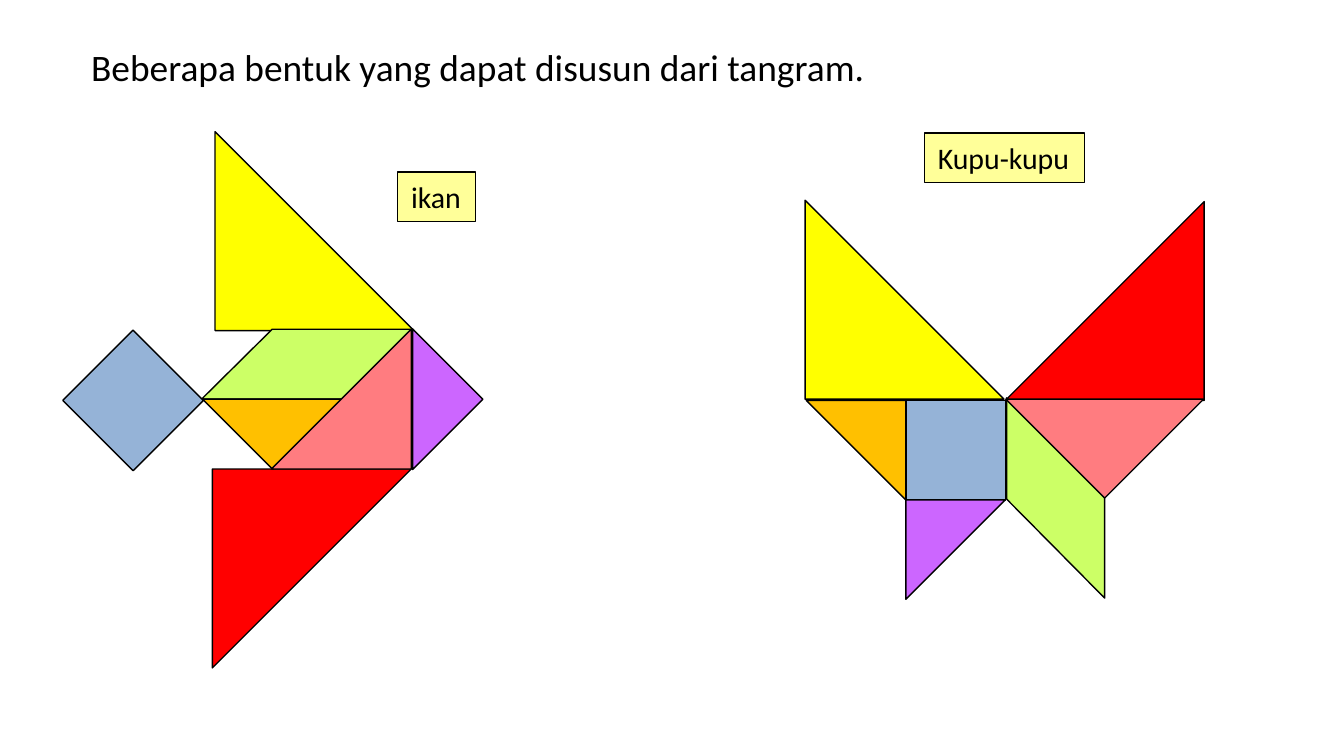
from pptx import Presentation
from pptx import util as u
from pptx.dml.color import RGBColor
from pptx.enum import shapes, text

BLACK = RGBColor(0x00, 0x00, 0x00)
YELLOW = RGBColor(0xFF, 0xFF, 0x00)
RED = RGBColor(0xFF, 0x00, 0x00)
GREEN = RGBColor(0xCC, 0xFF, 0x66)
ORANGE = RGBColor(0xFF, 0xC0, 0x00)
PINK = RGBColor(0xFF, 0x7C, 0x80)
BLUE = RGBColor(0x95, 0xB3, 0xD7)
PURPLE = RGBColor(0xCC, 0x66, 0xFF)
CREAM = RGBColor(0xFF, 0xFF, 0x99)

TRIANGLE = shapes.MSO_SHAPE.RIGHT_TRIANGLE
SQUARE = shapes.MSO_SHAPE.RECTANGLE
PARALLELOGRAM = shapes.MSO_SHAPE.PARALLELOGRAM
LARGE, MEDIUM, SMALL = (1.48, 1.48), (1.04, 1.04), (0.74, 0.74)
SLIDE_WIDTH = 10

TITLE = ("Beberapa bentuk yang dapat disusun dari tangram.", (0.58, 0.28, 6.01, 0.44))
LABELS = [
    ("ikan", (2.96, 1.28, 0.58, 0.37)),
    ("Kupu-kupu", (6.88, 0.99, 1.19, 0.37)),
]

FISH = [
    (TRIANGLE, YELLOW, (1.6, 0.98), LARGE, 0, ""),
    (TRIANGLE, RED, (1.58, 3.49), LARGE, 0, "V"),
    (PARALLELOGRAM, GREEN, (1.5, 2.45), (1.57, 0.52), 0, ""),
    (TRIANGLE, ORANGE, (1.66, 2.6), SMALL, 315, ""),
    (TRIANGLE, PINK, (2.02, 2.45), MEDIUM, 180, "V"),
    (SQUARE, BLUE, (0.62, 2.61), SMALL, 45, ""),
    (TRIANGLE, PURPLE, (2.7, 2.6), SMALL, 135, "V"),
]
BUTTERFLY = [
    (TRIANGLE, YELLOW, (5.99, 1.49), LARGE, 0, ""),
    (TRIANGLE, RED, (7.48, 1.5), LARGE, 0, "H"),
    (PARALLELOGRAM, GREEN, (7.11, 3.34), (1.49, 0.73), 270, "HV"),
    (TRIANGLE, ORANGE, (6, 2.98), SMALL, 0, "HV"),
    (TRIANGLE, PINK, (7.7, 2.45), MEDIUM, 315, ""),
    (SQUARE, BLUE, (6.74, 2.98), SMALL, 0, ""),
    (TRIANGLE, PURPLE, (6.74, 3.72), SMALL, 0, "V"),
]


def add_filled_shape(parent, kind, box, color):
    shape = parent.add_shape(kind, *map(u.Inches, box))
    shape.shadow.inherit = False
    shape.fill.solid()
    shape.fill.fore_color.rgb = color
    shape.line.color.rgb = BLACK
    shape.line.width = u.Pt(0.75)
    return shape


def add_tangram(slide, pieces):
    group = slide.shapes.add_group_shape()
    for kind, color, position, size, rotation, flips in pieces:
        shape = add_filled_shape(group.shapes, kind, position + size, color)
        shape.rotation = rotation
        if kind == PARALLELOGRAM:
            shape.adjustments[0] = 1.01
        for axis in flips:
            shape.element.spPr.xfrm.set("flip" + axis, "1")


def write(shape, words, size):
    frame = shape.text_frame
    frame.text = words
    frame_format = {
        "word_wrap": False,
        "auto_size": text.MSO_AUTO_SIZE.SHAPE_TO_FIT_TEXT,
        "vertical_anchor": text.MSO_ANCHOR.TOP,
    }
    for name, value in frame_format.items():
        setattr(frame, name, value)
    paragraph = frame.paragraphs[0]
    paragraph.alignment = text.PP_ALIGN.LEFT
    font = paragraph.runs[0].font
    for name, value in {"name": "Calibri", "size": u.Pt(size)}.items():
        setattr(font, name, value)
    font.color.rgb = BLACK


def main():
    presentation = Presentation()
    presentation.slide_width = u.Inches(SLIDE_WIDTH)
    presentation.slide_height = u.Inches(SLIDE_WIDTH * 9 / 16)
    slide = presentation.slides.add_slide(presentation.slide_layouts[6])

    title, title_box = TITLE
    write(slide.shapes.add_textbox(*map(u.Inches, title_box)), title, 20)
    for pieces in (FISH, BUTTERFLY):
        add_tangram(slide, pieces)
    for label, box in LABELS:
        write(add_filled_shape(slide.shapes, SQUARE, box, CREAM), label, 16)

    presentation.save("out.pptx")


if __name__ == "__main__":
    main()
